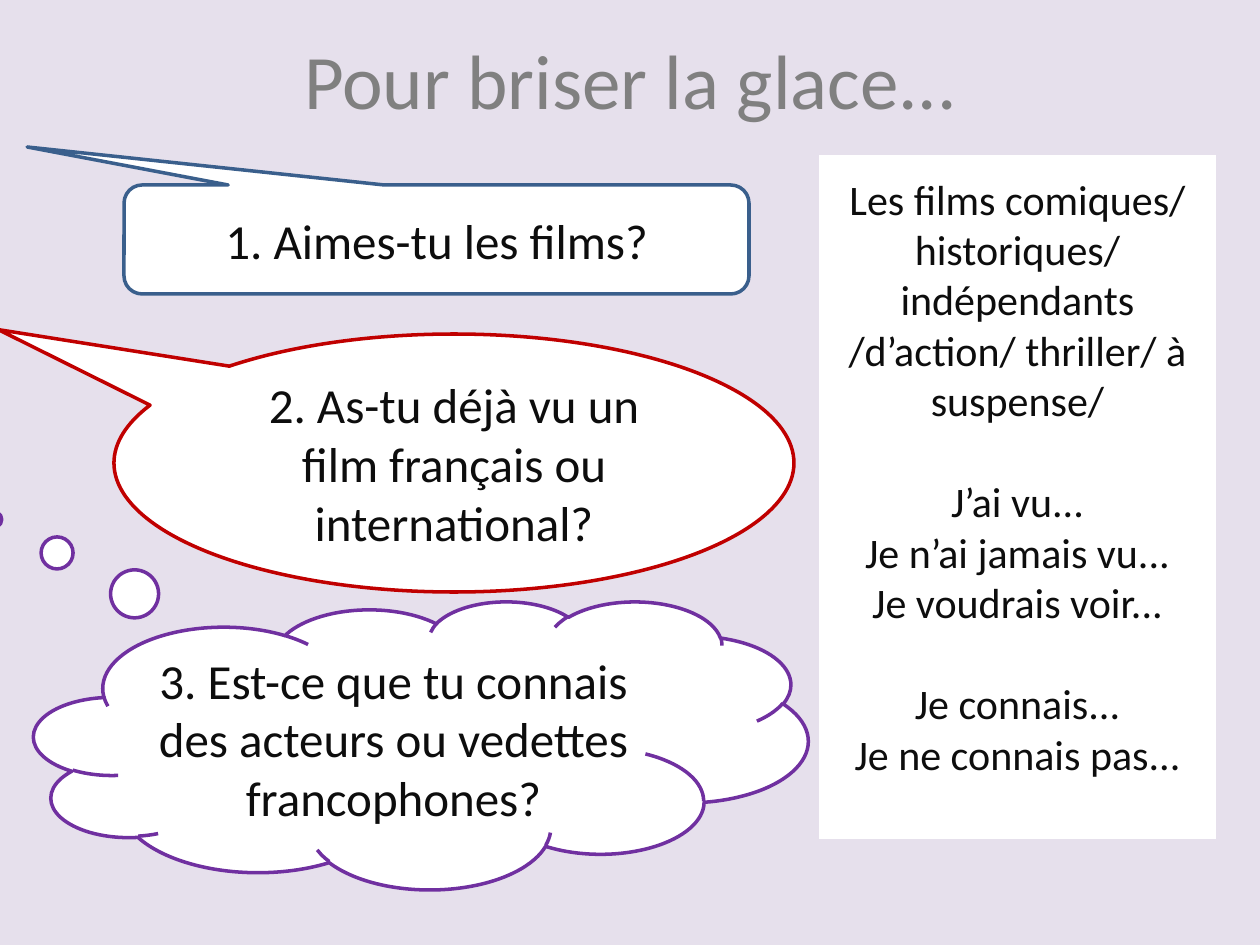
"""Builds the French ice-breaker slide about films."""
from pptx import Presentation
from pptx.dml.color import RGBColor
from pptx.enum.shapes import MSO_SHAPE
from pptx.enum.text import MSO_ANCHOR, PP_ALIGN
from pptx.util import Emu, Pt

COLORS = {
    "background": "E6E0EC", "title": "808080", "text": "0D0D0D",
    "paper": "FFFFFF", "blue": "3A5F8C", "red": "C00000", "purple": "7030A0",
}
EMU_PER_PX = 914400 / 126


def px(length):
    return Emu(round(length * EMU_PER_PX))


def rgb(name):
    return RGBColor.from_string(COLORS[name])


class SlideBuilder:
    font = "Calibri"

    def __init__(self, presentation):
        self.slide = presentation.slides.add_slide(presentation.slide_layouts[6])
        background = self.slide.background.fill
        background.solid()
        background.fore_color.rgb = rgb("background")

    def add_text(self, frame, groups, size, color="text", gap=0):
        frame.word_wrap = True
        frame.vertical_anchor = MSO_ANCHOR.MIDDLE
        lines = [(line, group > 0 and index == 0)
                 for group, members in enumerate(groups)
                 for index, line in enumerate(members)]
        for number, (line, opens_group) in enumerate(lines):
            paragraph = frame.add_paragraph() if number else frame.paragraphs[0]
            paragraph.alignment = PP_ALIGN.CENTER
            if opens_group:
                paragraph.space_before = Pt(gap)
            run = paragraph.add_run()
            run.text = line
            run.font.name = self.font
            run.font.size = Pt(size)
            run.font.color.rgb = rgb(color)

    def title(self, box, wording):
        heading = self.slide.shapes.add_textbox(*map(px, box))
        self.add_text(heading.text_frame, [[wording]], 44, "title")

    def shape(self, preset, box):
        shape = self.slide.shapes.add_shape(preset, *map(px, box))
        shape.shadow.inherit = False
        shape.fill.solid()
        shape.fill.fore_color.rgb = rgb("paper")
        return shape

    def callout(self, preset, box, tail, color, question):
        bubble = self.shape(preset, box)
        for index, value in enumerate(tail):
            bubble.adjustments[index] = value
        bubble.line.color.rgb = rgb(color)
        bubble.line.width = Pt(2)
        self.add_text(bubble.text_frame, [[question]], 28)

    def panel(self, box, groups, top_inset):
        panel = self.shape(MSO_SHAPE.RECTANGLE, box)
        panel.line.fill.background()
        self.add_text(panel.text_frame, groups, 24, gap=29)
        panel.text_frame.vertical_anchor = MSO_ANCHOR.TOP
        panel.text_frame.margin_top = px(top_inset)


def main():
    presentation = Presentation()
    presentation.slide_width, presentation.slide_height = px(1260), px(945)
    builder = SlideBuilder(presentation)
    builder.title((64, 0, 1134, 158), "Pour briser la glace...")

    questions = [
        (MSO_SHAPE.ROUNDED_RECTANGULAR_CALLOUT, (124, 185, 625, 109),
         (-0.655, -0.849, 0.167), "blue", "1. Aimes-tu les films?"),
        (MSO_SHAPE.OVAL_CALLOUT, (114, 334, 680, 258), (-0.67, -0.517), "red",
         "2. As-tu déjà vu un film français ou international?"),
        (MSO_SHAPE.CLOUD_CALLOUT, (34, 601, 774, 288), (-0.552, -0.783), "purple",
         "3. Est-ce que tu connais des acteurs ou vedettes francophones?"),
    ]
    for question in questions:
        builder.callout(*question)

    answers = [
        ["Les films comiques/ historiques/ indépendants /d’action/ thriller/ à suspense/"],
        ["J’ai vu...", "Je n’ai jamais vu...", "Je voudrais voir..."],
        ["Je connais...", "Je ne connais pas..."],
    ]
    builder.panel((819, 155, 397, 684), answers, 18)
    presentation.save("out.pptx")


if __name__ == "__main__":
    main()
